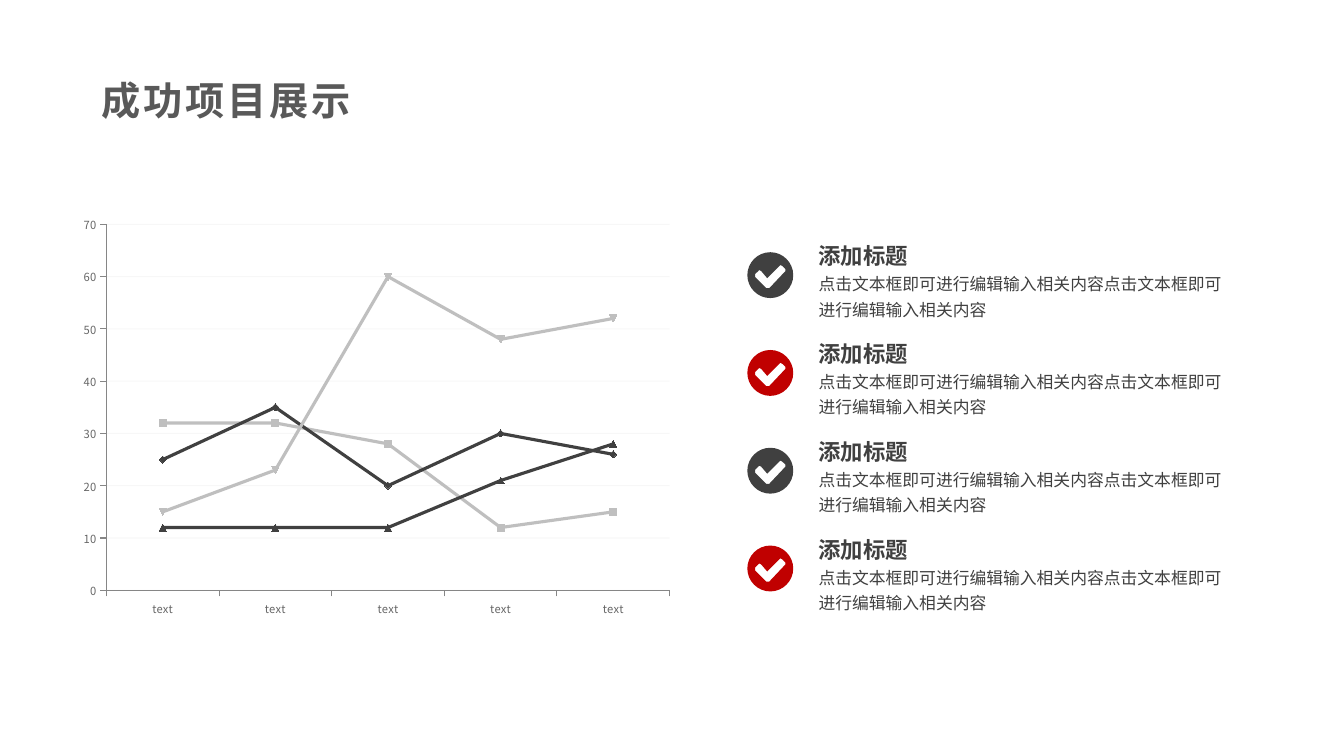
from lxml import etree
from pptx import Presentation
from pptx.chart.data import CategoryChartData
from pptx.dml.color import RGBColor
from pptx.enum.chart import XL_CHART_TYPE, XL_TICK_MARK
from pptx.enum.text import MSO_ANCHOR
from pptx.oxml import parse_xml
from pptx.oxml.ns import nsdecls, qn
from pptx.util import Inches, Pt

LINE_MARKERS = XL_CHART_TYPE.LINE_MARKERS
TICK_OUT = XL_TICK_MARK.OUTSIDE
MIDDLE = MSO_ANCHOR.MIDDLE

FONT = "Noto Sans CJK SC"
COLORS = {
    "title": "595959",
    "dark": "404040",
    "light": "BFBFBF",
    "red": "C00000",
    "label": "666666",
    "axis": "868686",
    "grid": "808080",
}


def color(name):
    return RGBColor.from_string(COLORS[name])


def add_text(x, y, w, h, text, size, color_name, bold=False):
    sp = s.shapes.add_textbox(Inches(x), Inches(y), Inches(w), Inches(h))
    tf = sp.text_frame
    tf.word_wrap = True
    p = tf.paragraphs[0]
    r = p.add_run()
    r.text = text
    r.font.size = Pt(size)
    r.font.bold = bold
    r.font.name = FONT
    r.font.color.rgb = color(color_name)
    rPr = r._r.get_or_add_rPr()
    etree.SubElement(rPr, qn("a:ea")).set("typeface", FONT)
    return tf


prs = Presentation()
prs.slide_width = Inches(13.33)
prs.slide_height = Inches(7.5)
s = prs.slides.add_slide(prs.slide_layouts[6])

SERIES = [
    ("Series 1", (32, 32, 28, 12, 15), "light"),
    ("Series 2", (25, 35, 20, 30, 26), "dark"),
    ("Series 3", (15, 23, 60, 48, 52), "light"),
    ("Series 4", (12, 12, 12, 21, 28), "dark"),
]
data = CategoryChartData()
data.categories = ["text"] * 5
for name, values, _ in SERIES:
    data.add_series(name, values)
chart = s.shapes.add_chart(
    LINE_MARKERS, Inches(0.71), Inches(2.06), Inches(6.06), Inches(4.15), data
).chart
chart.has_legend = False
chart.has_title = False
chart.font.name = FONT
chart.font.size = Pt(8)
chart.font.color.rgb = color("label")
chart.plots[0].vary_by_categories = False

for series, (_, _, color_name) in zip(chart.plots[0].series, SERIES):
    series.smooth = False
    series.format.line.color.rgb = color(color_name)
    series.format.line.width = Pt(2.25)
    series.marker.size = 5
    fmt = series.marker.format
    fmt.fill.solid()
    fmt.fill.fore_color.rgb = color(color_name)
    fmt.line.fill.background()

for axis in (chart.category_axis, chart.value_axis):
    axis.major_tick_mark = TICK_OUT
    axis.format.line.color.rgb = color("axis")
    axis.format.line.width = Pt(0.75)

value_axis = chart.value_axis
value_axis.minimum_scale = 0
value_axis.maximum_scale = 70
value_axis.major_unit = 10
value_axis.has_major_gridlines = True
grid = value_axis.major_gridlines.format.line
grid.color.rgb = color("grid")
grid.width = Pt(0.75)
for clr in value_axis.major_gridlines._xAx.iter(qn("a:srgbClr")):
    if clr.get("val") == COLORS["grid"]:
        etree.SubElement(clr, qn("a:alpha")).set("val", "5000")

plot_area = chart._chartSpace.chart.plotArea
for layout in plot_area.findall(qn("c:layout")):
    plot_area.remove(layout)
plot_area.insert(0, parse_xml(
    f'<c:layout {nsdecls("c")}><c:manualLayout><c:layoutTarget val="inner"/>'
    '<c:xMode val="edge"/><c:yMode val="edge"/>'
    '<c:x val="0.057"/><c:y val="0.04"/><c:w val="0.922"/><c:h val="0.875"/>'
    '</c:manualLayout></c:layout>'
))

ROW_PITCH = 0.97
RADIUS = 0.455 / 2
ROUNDNESS = 0.55
CIRCLE = [(0, RADIUS), (-RADIUS, 0), (0, -RADIUS), (RADIUS, 0), (0, RADIUS)]
CHECK = [
    (0.15, -0.06), (0.12, -0.09), (0.1, -0.1), (0.09, -0.09),
    (-0.03, 0.03), (-0.09, -0.04), (-0.11, -0.05), (-0.12, -0.04),
    (-0.15, -0.01), (-0.15, 0.02), (-0.04, 0.13), (-0.03, 0.13),
    (-0.01, 0.13), (0.15, -0.04), (0.15, -0.05),
]
for row, badge_color in enumerate(["dark", "red"] * 2):
    dy = row * ROW_PITCH
    circle, check = (
        [(Inches(7.64 + x), Inches(2.73 + dy + y)) for x, y in outline]
        for outline in (CIRCLE, CHECK)
    )
    builder = s.shapes.build_freeform(*circle[0])
    builder.add_line_segments(circle[1:], close=True)
    builder.move_to(*check[0])
    builder.add_line_segments(check[1:], close=True)
    badge = builder.convert_to_shape()
    badge.shadow.inherit = False
    badge.fill.solid()
    badge.fill.fore_color.rgb = color(badge_color)
    badge.line.fill.background()

    edges = list(badge._element.iter(qn("a:lnTo")))[:4]
    for edge, (x0, y0), (x1, y1) in zip(edges, CIRCLE, CIRCLE[1:]):
        curve = etree.Element(qn("a:cubicBezTo"))
        controls = [(x0 + ROUNDNESS * x1, y0 + ROUNDNESS * y1),
                    (x1 + ROUNDNESS * x0, y1 + ROUNDNESS * y0), (x1, y1)]
        for x, y in controls:
            pt = etree.SubElement(curve, qn("a:pt"))
            pt.set("x", str(Inches(RADIUS + x)))
            pt.set("y", str(Inches(RADIUS + y)))
        edge.getparent().replace(edge, curve)

    body = add_text(8.02, 2.62 + dy, 4.33, 0.58,
                    "点击文本框即可进行编辑输入相关内容点击文本框即可进行编辑输入相关内容", 12, "dark")
    heading = add_text(8.02, 2.29 + dy, 1.48, 0.41, "添加标题", 16, "dark", bold=True)
    for tf in (body, heading):
        tf.paragraphs[0].line_spacing = 1.25

tf = add_text(0.9, 0.64, 11.87, 0.71, "成功项目展示", 28, "title", bold=True)
tf.vertical_anchor = MIDDLE
tf.margin_left = Inches(0.11)
tf.margin_right = Inches(0.08)
tf.margin_top = tf.margin_bottom = Inches(0.04)
tf.paragraphs[0].runs[0]._r.get_or_add_rPr().set("spc", "200")

prs.save("out.pptx")
